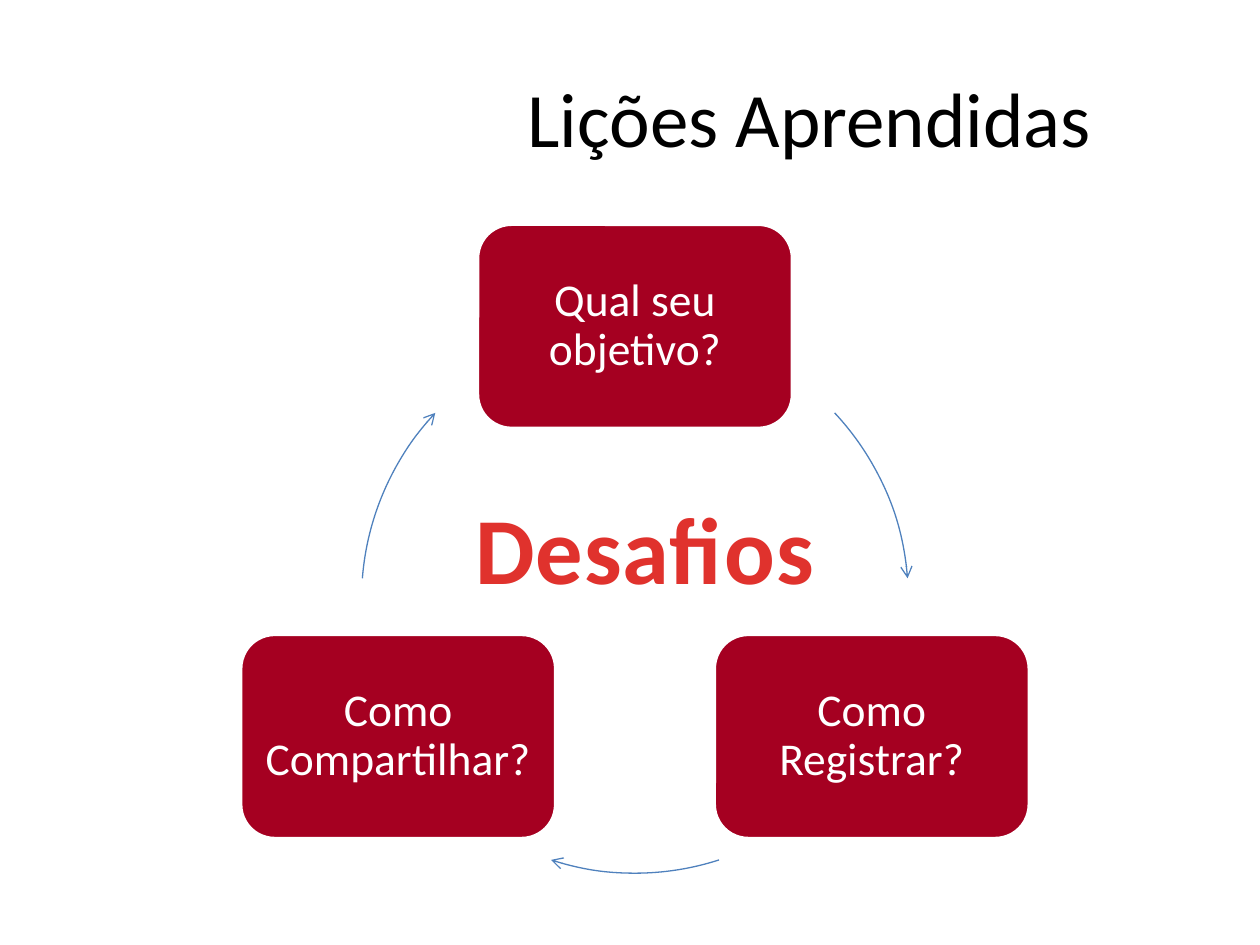
from math import cos, radians, sin

from lxml.etree import SubElement
from pptx import Presentation
from pptx.dml.color import RGBColor as Rgb
from pptx.enum.shapes import MSO_SHAPE as Shape
from pptx.enum.text import MSO_ANCHOR as Anchor, PP_ALIGN as Align
from pptx.oxml.ns import qn
from pptx.util import Inches, Pt

COLORS = {"ink": "000000", "box": "A50021", "white": "FFFFFF",
          "arrow": "4F81BD", "focus": "E0322D"}
MID_X, MID_Y, RADIUS = 5.04, 4.76, 2.17
BOX_W, BOX_H = 2.5, 1.62
# Text, angle of its box, then start and end angle of the arrow that follows
STEPS = [("Qual seu objetivo?", -90, 316.9, 355.5),
         ("Como Registrar?", 30, 72.1, 107.9),
         ("Como Compartilhar?", 150, 184.5, 223.1)]


class Deck:
    font = "Calibri"

    def __init__(self, slide):
        self.slide = slide

    def color(self, name):
        return Rgb.from_string(COLORS[name])

    def text(self, shape, words, size, color, bold=False, wrap=True, gap=1.0):
        frame = shape.text_frame
        frame.word_wrap = wrap
        frame.vertical_anchor = Anchor.MIDDLE
        par = frame.paragraphs[0]
        par.alignment = Align.CENTER
        par.line_spacing = gap
        run = par.add_run()
        run.text = words
        for key, value in {"name": self.font, "size": Pt(size), "bold": bold}.items():
            setattr(run.font, key, value)
        run.font.color.rgb = self.color(color)

    def label(self, area, words, size, color, **style):
        box = self.slide.shapes.add_textbox(*map(Inches, area))
        self.text(box, words, size, color, **style)
        return box

    def shape(self, kind, area, line, width):
        item = self.slide.shapes.add_shape(kind, *map(Inches, area))
        item.shadow.inherit = False
        item.line.color.rgb = self.color(line)
        item.line.width = Pt(width)
        return item

    def step(self, words, angle):
        """Place a box on the ring, at an angle clockwise from the right."""
        x = MID_X + RADIUS * cos(radians(angle))
        y = MID_Y + RADIUS * sin(radians(angle))
        area = (x - BOX_W / 2, y - BOX_H / 2, BOX_W, BOX_H)
        box = self.shape(Shape.ROUNDED_RECTANGLE, area, "white", 2)
        box.fill.solid()
        box.fill.fore_color.rgb = self.color("box")
        for side in ("left", "right", "top", "bottom"):
            setattr(box.text_frame, f"margin_{side}", Inches(0.03))
        self.text(box, words, 26, "white", gap=0.9)

    def arrow(self, start, end):
        """Draw a clockwise arc of the ring between two angles."""
        area = (MID_X - RADIUS, MID_Y - RADIUS, 2 * RADIUS, 2 * RADIUS)
        arc = self.shape(Shape.ARC, area, "arrow", 0.75)
        arc.fill.background()
        for i, angle in enumerate((start, end)):
            arc.adjustments[i] = angle * 0.6  # 60000 units a degree, over 100000
        line = arc.element.spPr.find(qn("a:ln"))
        SubElement(line, qn("a:tailEnd"), type="arrow")


def main():
    prs = Presentation()
    prs.slide_width, prs.slide_height = Inches(10), Inches(7.5)
    deck = Deck(prs.slides.add_slide(prs.slide_layouts[6]))
    deck.label((3.35, 0.3, 6.15, 1.25), "Lições Aprendidas", 44, "ink")
    for words, angle, start, end in STEPS:
        deck.step(words, angle)
        deck.arrow(start, end)
    focus = deck.label((3.66, 3.83, 2.92, 1.01), "Desafios", 54, "focus",
                       bold=True, wrap=False)
    for props in focus.element.iter(qn("a:rPr")):
        props.set("spc", "50")
    prs.save("out.pptx")


if __name__ == "__main__":
    main()
